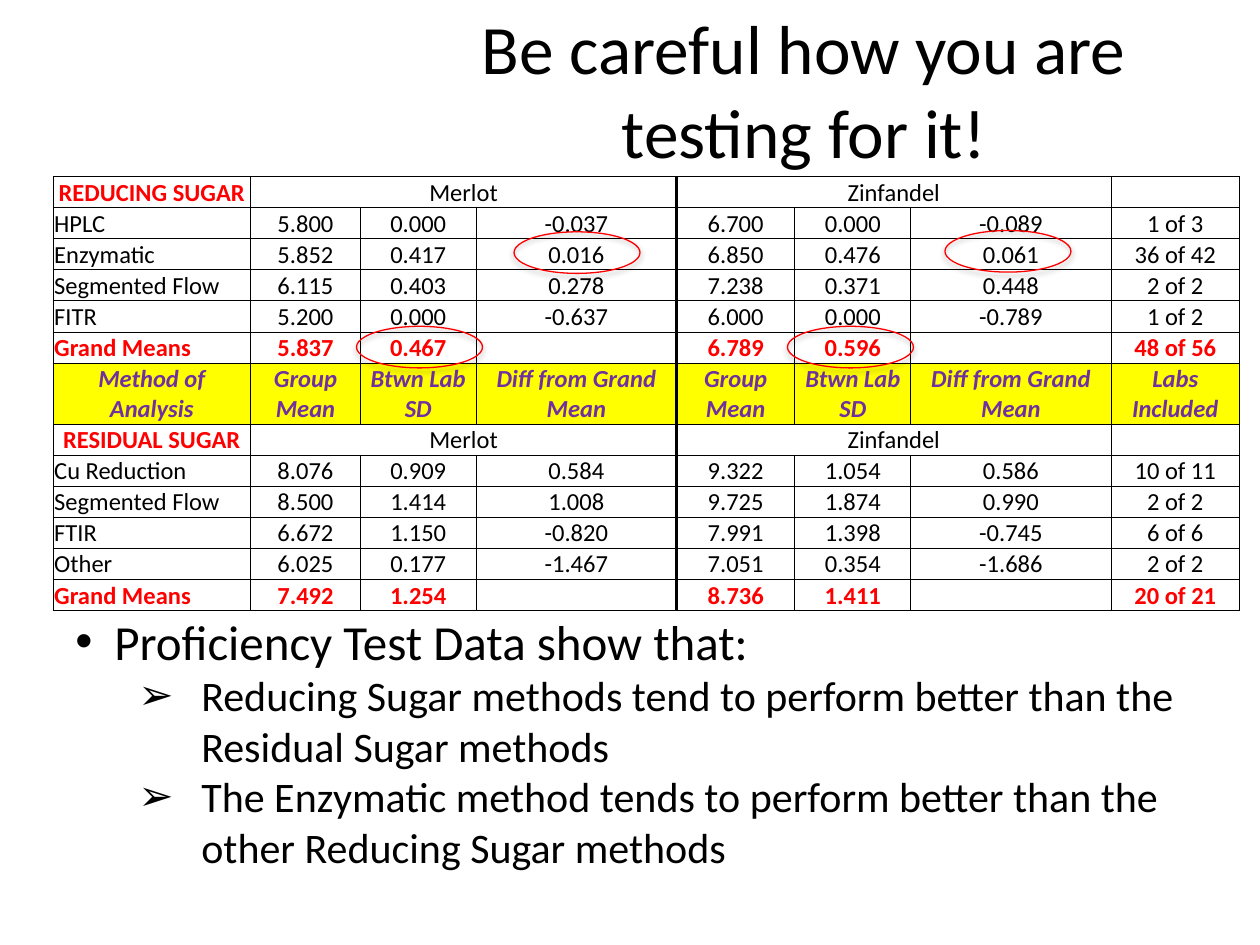
from dataclasses import dataclass

from lxml.etree import SubElement as Sub
from pptx import Presentation
from pptx.dml.color import RGBColor as Rgb
from pptx.enum.shapes import MSO_SHAPE as Shape
from pptx.enum.text import MSO_ANCHOR as Anchor, PP_ALIGN as Align
from pptx.oxml.ns import qn
from pptx.util import Inches, Pt


@dataclass(frozen=True)
class Theme:
    """Colours, font and type sizes of the slide."""
    font: str = "Calibri"
    ink: str = "000000"
    red: str = "FF0000"
    plum: str = "7030A0"
    gold: str = "FFFF00"
    title: float = 39.6
    lead: float = 28
    point: float = 24
    cell: float = 14
    thin: float = 0.5
    thick: float = 1.5
    ring: float = 0.75


THEME = Theme()
COLS = (1.57, 0.87, 0.92, 1.59, 0.94, 0.92, 1.59, 1.02)
ROW = 0.2
SPLIT = 3
HEADS = ("Group Mean", "Btwn Lab SD", "Diff from Grand Mean")
WINES = ("Merlot", None, None, "Zinfandel", None, None, "")
ROWS = (
    ("REDUCING SUGAR", *WINES),
    ("HPLC", "5.800", "0.000", "-0.037", "6.700", "0.000", "-0.089", "1 of 3"),
    ("Enzymatic", "5.852", "0.417", "0.016", "6.850", "0.476", "0.061", "36 of 42"),
    ("Segmented Flow", "6.115", "0.403", "0.278", "7.238", "0.371", "0.448", "2 of 2"),
    ("FITR", "5.200", "0.000", "-0.637", "6.000", "0.000", "-0.789", "1 of 2"),
    ("Grand Means", "5.837", "0.467", "", "6.789", "0.596", "", "48 of 56"),
    ("Method of Analysis", *HEADS, *HEADS, "Labs Included"),
    ("RESIDUAL SUGAR", *WINES),
    ("Cu Reduction", "8.076", "0.909", "0.584", "9.322", "1.054", "0.586", "10 of 11"),
    ("Segmented Flow", "8.500", "1.414", "1.008", "9.725", "1.874", "0.990", "2 of 2"),
    ("FTIR", "6.672", "1.150", "-0.820", "7.991", "1.398", "-0.745", "6 of 6"),
    ("Other", "6.025", "0.177", "-1.467", "7.051", "0.354", "-1.686", "2 of 2"),
    ("Grand Means", "7.492", "1.254", "", "8.736", "1.411", "", "20 of 21"),
)
RINGS = ((2.83, 2.59), (6.25, 2.59), (7.5, 1.83), (4.08, 1.84))
POINTS = (
    "Reducing Sugar methods tend to perform better than the Residual Sugar methods",
    "The Enzymatic method tends to perform better than the other Reducing Sugar methods",
)


def write(para, text, size, tint=THEME.ink, bold=False, slant=False):
    """Add one styled run to a paragraph."""
    run = para.add_run()
    run.text = text
    font = run.font
    font.name, font.size = THEME.font, Pt(size)
    font.bold, font.italic = bold, slant
    font.color.rgb = Rgb.from_string(tint)


def tint(node, value):
    """Add a colour element under an XML node and return it."""
    return Sub(node, qn("a:srgbClr"), val=value)


def edge(cell, col, last):
    """Draw the four borders of a cell, thick along the split."""
    props = cell._tc.get_or_add_tcPr()
    for side in "LRTB":
        split = (side == "R" and last == SPLIT) or (side == "L" and col == SPLIT + 1)
        width = THEME.thick if split else THEME.thin
        line = Sub(props, qn(f"a:ln{side}"), w=str(Pt(width)))
        tint(Sub(line, qn("a:solidFill")), THEME.ink)


def fill_cell(cell, text, col, label):
    """Set the text, alignment, fill and insets of a table cell."""
    head = label == "Method of Analysis"
    total = label == "Grand Means"
    name = label.isupper() and col == 0 and label not in ("HPLC", "FITR", "FTIR")
    cell.vertical_anchor = Anchor.BOTTOM
    cell.margin_left = cell.margin_right = cell.margin_top = Inches(0.01)
    cell.margin_bottom = 0
    para = cell.text_frame.paragraphs[0]
    para.alignment = Align.CENTER if col or head or name else Align.LEFT
    if text:
        ink = THEME.plum if head else THEME.red if total or name else THEME.ink
        write(para, text, THEME.cell, ink, head or total or name, head)
    else:
        Sub(para._p, qn("a:endParaRPr"), sz=str(THEME.cell * 100))
    if head:
        cell.fill.solid()
        cell.fill.fore_color.rgb = Rgb.from_string(THEME.gold)
    else:
        cell.fill.background()


def add_grid(slide, left, top, width, height):
    """Place the table of test results."""
    frame = slide.shapes.add_table(
        len(ROWS), len(COLS), left, top, width, Inches(ROW * len(ROWS)))
    grid = frame.table
    grid.first_row = grid.horz_banding = False
    for col, size in zip(grid.columns, COLS):
        col.width = Inches(size)
    for r, row in enumerate(ROWS):
        for c, text in enumerate(row):
            cell = grid.cell(r, c)
            wide = c + 1 < len(row) and row[c + 1] is None and text is not None
            last = c + 2 if wide else c
            if wide:
                cell.merge(grid.cell(r, last))
            edge(cell, c, last)
            fill_cell(cell, text, c, row[0])
    frame.height = height


def add_ring(group, left, top, width, height):
    """Place one red ellipse with a soft shadow."""
    ring = group.shapes.add_shape(Shape.OVAL, left, top, width, height)
    ring.fill.background()
    ring.line.color.rgb = Rgb.from_string(THEME.red)
    ring.line.width = Pt(THEME.ring)
    ring.shadow.inherit = False
    glow = Sub(ring._element.spPr.find(qn("a:effectLst")), qn("a:outerShdw"),
               blurRad=str(Pt(3.1)), dist=str(Pt(1.8)), dir="5400000", rotWithShape="0")
    Sub(tint(glow, THEME.ink), qn("a:alpha"), val="35000")


def add_title(slide, left, top, width, height):
    """Place the slide title."""
    title = slide.shapes.title
    title.left, title.top, title.width, title.height = left, top, width, height
    frame = title.text_frame
    frame.vertical_anchor = Anchor.MIDDLE
    para = frame.paragraphs[0]
    para.alignment = Align.CENTER
    write(para, "Be careful how you are testing for it!", THEME.title)


def add_point(para, text, size, mark, indent, hang, level=0):
    """Write one bulleted paragraph."""
    para.level = level
    props = para._p.get_or_add_pPr()
    props.set("marL", str(Inches(indent)))
    props.set("indent", str(-Inches(hang)))
    Sub(props, qn("a:buFont"), typeface="Arial")
    Sub(props, qn("a:buChar"), char=mark)
    write(para, text, size)


def add_notes(slide, left, top, width, height):
    """Place the bulleted findings."""
    frame = slide.shapes.add_textbox(left, top, width, height).text_frame
    frame.word_wrap = True
    add_point(frame.paragraphs[0], "Proficiency Test Data show that:",
              THEME.lead, "•", 0.31, 0.31)
    for text in POINTS:
        add_point(frame.add_paragraph(), text, THEME.point, "➢", 1, 0.5, 1)


def main():
    """Build and save the slide."""
    deck = Presentation()
    deck.slide_width, deck.slide_height = Inches(10), Inches(7.5)
    slide = deck.slides.add_slide(deck.slide_layouts[5])
    add_title(slide, Inches(3.17), Inches(0.08), Inches(6.42), Inches(1.25))
    add_grid(slide, Inches(0.42), Inches(1.4), Inches(9.43), Inches(3.4))
    group = slide.shapes.add_group_shape()
    for left, top in RINGS:
        add_ring(group, Inches(left), Inches(top), Inches(1), Inches(0.33))
    add_notes(slide, Inches(0.5), Inches(4.8), Inches(9.3), Inches(2.19))
    deck.save("out.pptx")


if __name__ == "__main__":
    main()
